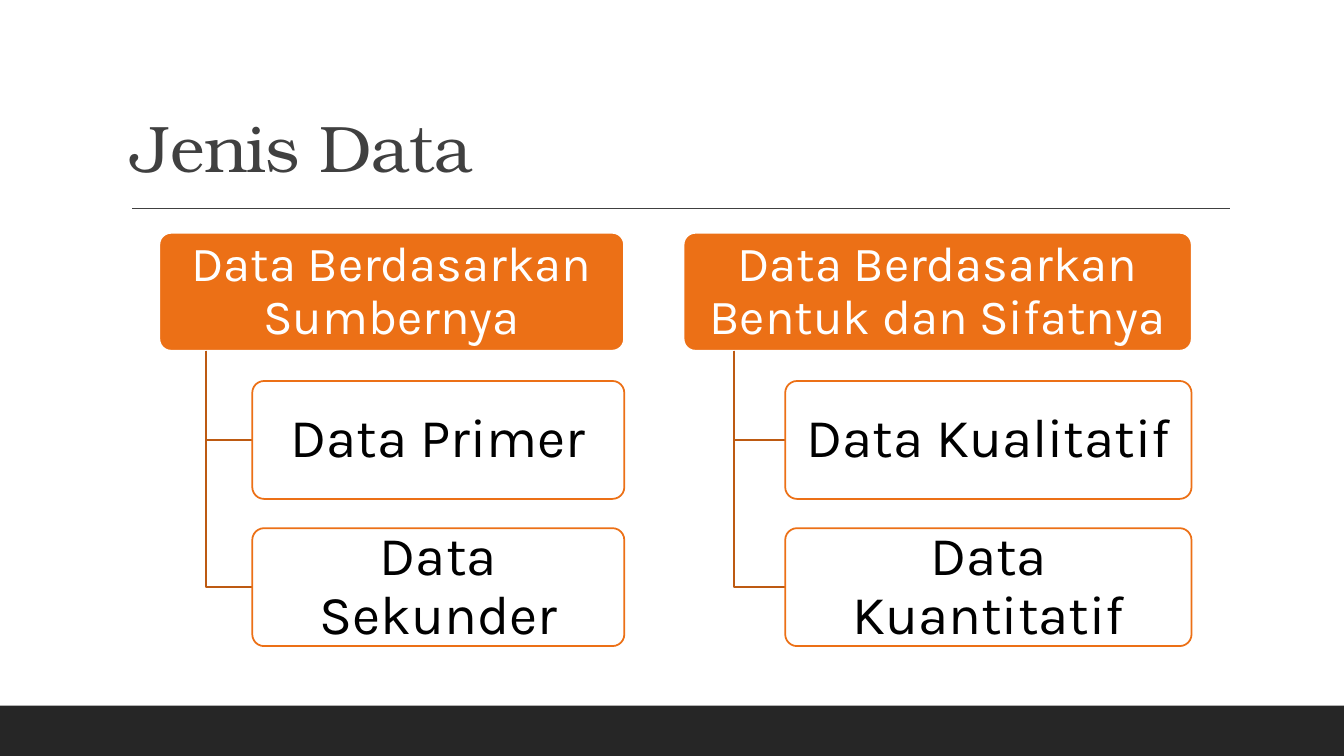
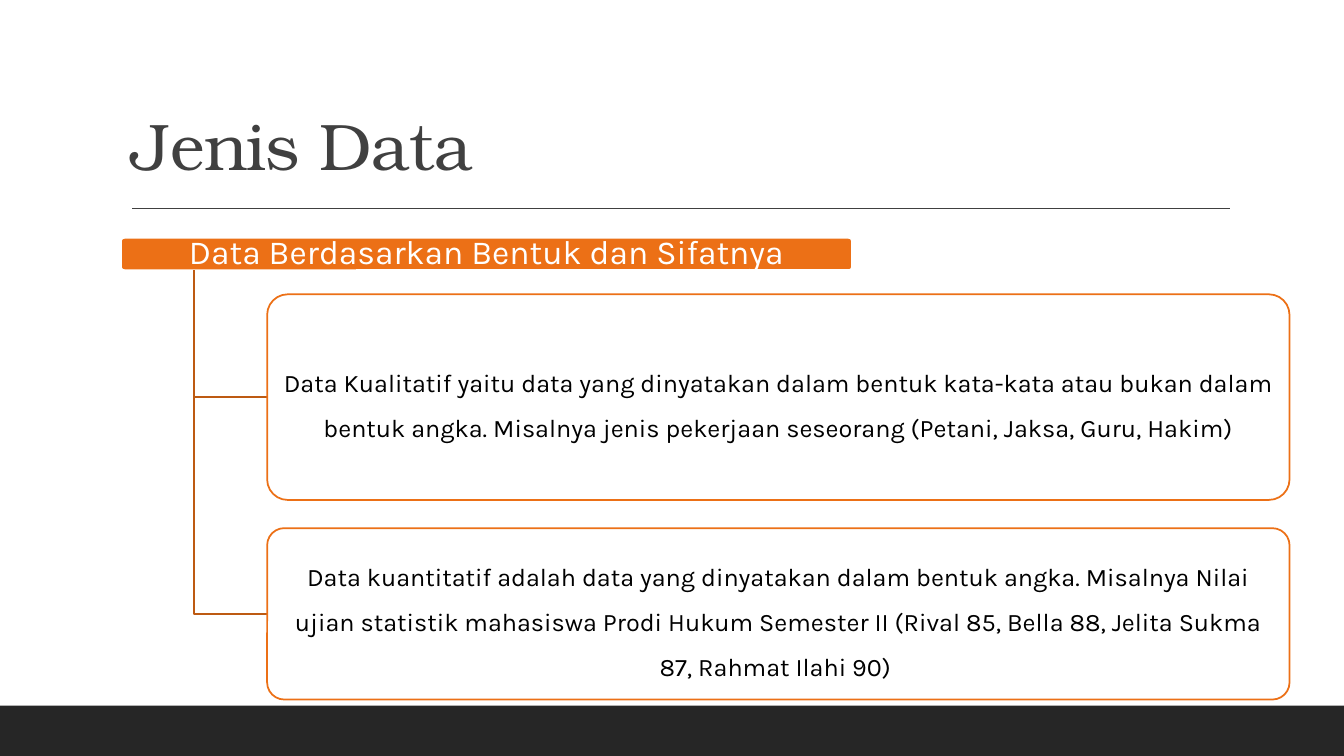
from lxml import etree
from pptx import Presentation
from pptx.dml.color import RGBColor
from pptx.enum.shapes import MSO_CONNECTOR, MSO_SHAPE
from pptx.enum.text import MSO_ANCHOR, PP_ALIGN
from pptx.oxml.ns import qn
from pptx.util import Inches, Pt

RECT, ROUNDED = MSO_SHAPE.RECTANGLE, MSO_SHAPE.ROUNDED_RECTANGLE
STRAIGHT = MSO_CONNECTOR.STRAIGHT
LEFT, CENTER = PP_ALIGN.LEFT, PP_ALIGN.CENTER
MIDDLE, BOTTOM = MSO_ANCHOR.MIDDLE, MSO_ANCHOR.BOTTOM

ORANGE, BROWN, WHITE, BLACK = "EC7016", "BD5A12", "FFFFFF", "000000"
GREY, DARK = "404040", "262626"
TITLE_FONT, BODY_FONT = "TeX Gyre Bonum", "Karla"

# Content: each tree has a header and child boxes given as (text, height)
SMALL_TREE = {
    "top": 2.31, "header_height": 1.17, "header_gap": 0.3, "gap": 0.29,
    "header_text": {"size": 35, "spacing": 0.9, "margins": (0.07, 0.05)},
    "child_text": {"size": 39, "spacing": 0.9, "margins": (0.08, 0.05)},
}
WIDE_TREE = {
    "top": 2.36, "header_height": 0.32, "header_gap": 0.24, "gap": 0.28,
    "header_text": {"size": 24, "spacing": 0.9, "margins": (0.05, 0.03)},
    "child_text": {"size": 18, "spacing": 1.5, "margins": (0.04, 0.03)},
}
PAGES = [
    {"title": "Jenis Data", "title_top": 0.31, "trees": [
        {**SMALL_TREE, "left": 1.58, "width": 4.61, "child_width": 3.69,
         "header": "Data Berdasarkan Sumbernya",
         "children": [("Data Primer", 1.17), ("Data Sekunder", 1.17)]},
        {**SMALL_TREE, "left": 6.78, "width": 5.04, "child_width": 4.03,
         "header": "Data Berdasarkan Bentuk dan Sifatnya",
         "children": [("Data Kualitatif", 1.17), ("Data Kuantitatif", 1.17)]},
    ]},
    {"title": "Jenis Data", "title_top": 0.29, "trees": [
        {**WIDE_TREE, "left": 1.2, "width": 7.25, "child_width": 10.14,
         "header": "Data Berdasarkan Bentuk dan Sifatnya",
         "children": [
             ("Data Kualitatif yaitu data yang dinyatakan dalam bentuk "
              "kata-kata atau bukan dalam bentuk angka. Misalnya jenis "
              "pekerjaan seseorang (Petani, Jaksa, Guru, Hakim)", 2.04),
             ("Data kuantitatif adalah data yang dinyatakan dalam bentuk "
              "angka. Misalnya Nilai ujian statistik mahasiswa Prodi Hukum "
              "Semester II (Rival 85, Bella 88, Jelita Sukma 87, Rahmat "
              "Ilahi 90) ", 1.7)]},
    ]},
]


def color(value):
    return RGBColor.from_string(value)


def set_attributes(target, values):
    for name, value in values.items():
        setattr(target, name, value)


def set_line(shape, ink, width):
    shape.line.color.rgb = color(ink)
    shape.line.width = Pt(width)


def write(shape, text, size, font, ink, spacing, margins, align, anchor):
    across, down = (Inches(margin) for margin in margins)
    frame = shape.text_frame
    set_attributes(frame, {
        "word_wrap": True, "vertical_anchor": anchor,
        "margin_left": across, "margin_right": across,
        "margin_top": down, "margin_bottom": down})
    para = frame.paragraphs[0]
    set_attributes(para, {"alignment": align, "line_spacing": spacing})
    span = para.add_run()
    span.text = text
    set_attributes(span.font, {"size": Pt(size), "name": font})
    span.font.color.rgb = color(ink)
    return span


def add_box(page, kind, place, fill, outline=None):
    box = page.shapes.add_shape(kind, *(Inches(length) for length in place))
    box.shadow.inherit = False
    box.fill.solid()
    box.fill.fore_color.rgb = color(fill)
    if outline:
        set_line(box, outline, 1.25)
    else:
        box.line.fill.background()
    return box


def add_card(page, place, text, fill, outline, ink, text_format):
    card = add_box(page, ROUNDED, place, fill, outline)
    card.adjustments[0] = 0.1
    write(card, text, font=BODY_FONT, ink=ink, align=CENTER, anchor=MIDDLE,
          **text_format)


def add_elbow(page, points):
    start, *corners = [(Inches(x), Inches(y)) for x, y in points]
    builder = page.shapes.build_freeform(*start)
    builder.add_line_segments(corners, close=False)
    elbow = builder.convert_to_shape()
    elbow.shadow.inherit = False
    elbow.fill.background()
    set_line(elbow, BROWN, 1.25)


def add_frame(page, title, title_top):
    # Footer band
    add_box(page, RECT, (0, 7, 13.33, 0.5), DARK)

    # Rule under the title
    rule = page.shapes.add_connector(
        STRAIGHT, Inches(1.31), Inches(2.07), Inches(12.2), Inches(2.07))
    set_line(rule, GREY, 1)
    etree.SubElement(rule._element.spPr, qn("a:effectLst"))

    # Title
    box = page.shapes.add_textbox(
        Inches(1.21), Inches(title_top), Inches(11), Inches(1.59))
    span = write(box, title, 47, TITLE_FONT, GREY, 0.9, (0.1, 0.05),
                 LEFT, BOTTOM)
    span.font._element.set("spc", "-50")


def add_tree(page, tree):
    left, top, width = tree["left"], tree["top"], tree["width"]
    trunk_x, child_x = left + 0.1 * width, left + 0.2 * width
    header_bottom = top + tree["header_height"]
    add_card(page, (left, top, width, tree["header_height"]), tree["header"],
             ORANGE, WHITE, WHITE, tree["header_text"])

    # Child boxes, each with an elbow from the header
    child_top = header_bottom + tree["header_gap"]
    for text, height in tree["children"]:
        middle = child_top + height / 2
        add_elbow(page, [(trunk_x, header_bottom), (trunk_x, middle),
                         (child_x, middle)])
        add_card(page, (child_x, child_top, tree["child_width"], height),
                 text, WHITE, ORANGE, BLACK, tree["child_text"])
        child_top += height + tree["gap"]


def main():
    deck = Presentation()
    deck.slide_width, deck.slide_height = Inches(13.33), Inches(7.5)
    for content in PAGES:
        page = deck.slides.add_slide(deck.slide_layouts[6])
        add_frame(page, content["title"], content["title_top"])
        for tree in content["trees"]:
            add_tree(page, tree)
    deck.save("out.pptx")


if __name__ == "__main__":
    main()
